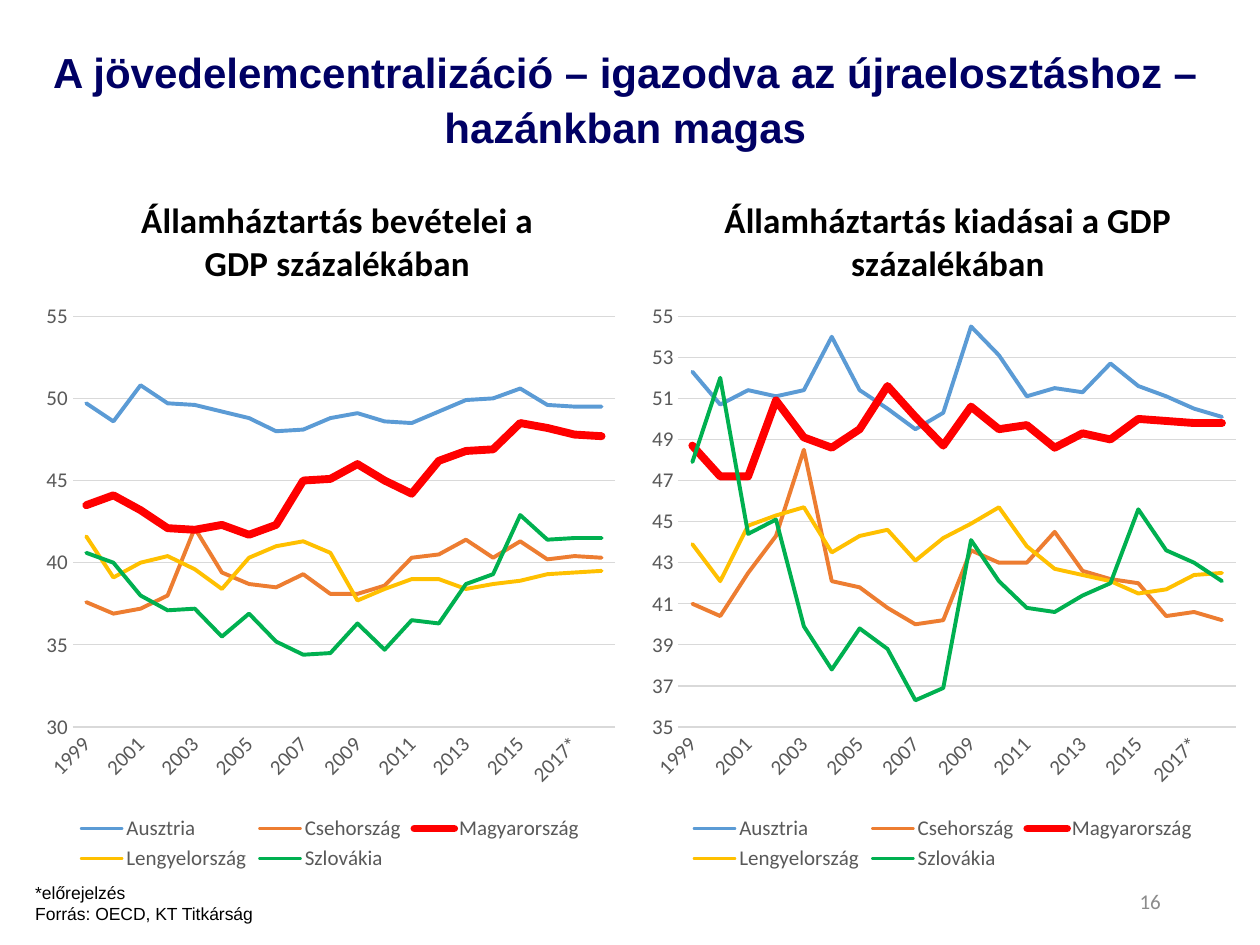
import dataclasses

import pptx
import pptx.chart.data
import pptx.dml.color
import pptx.enum.chart
import pptx.enum.text
import pptx.oxml
import pptx.oxml.ns
import pptx.util
from pptx.util import Cm, Pt


@dataclasses.dataclass(frozen=True)
class Theme:
    head: str = "Arial"
    text: str = "Calibri"
    navy: str = "000064"
    black: str = "000000"
    grey: str = "595959"
    pale: str = "8C8C8C"
    grid: str = "D9D9D9"
    title: int = 24
    chart: int = 20
    label: int = 12
    note: int = 10


THEME = Theme()
ALIGN = pptx.enum.text.PP_ALIGN
ANCHOR = pptx.enum.text.MSO_ANCHOR

YEARS = [str(y) for y in range(1999, 2016)] + ["2016*", "2017*", "2018*"]

# Country: line colour, line width
LINES = {
    "Ausztria": ("5B9BD5", 2.25),
    "Csehország": ("ED7D31", 2.25),
    "Magyarország": ("FF0000", 4.5),
    "Lengyelország": ("FFC000", 2.25),
    "Szlovákia": ("00B050", 2.25),
}

# Values by country, in the order of LINES
INCOME = [
    [49.7, 48.6, 50.8, 49.7, 49.6, 49.2, 48.8, 48, 48.1, 48.8,
     49.1, 48.6, 48.5, 49.2, 49.9, 50, 50.6, 49.6, 49.5, 49.5],
    [37.6, 36.9, 37.2, 38, 42.1, 39.4, 38.7, 38.5, 39.3, 38.1,
     38.1, 38.6, 40.3, 40.5, 41.4, 40.3, 41.3, 40.2, 40.4, 40.3],
    [43.5, 44.1, 43.2, 42.1, 42, 42.3, 41.7, 42.3, 45, 45.1,
     46, 45, 44.2, 46.2, 46.8, 46.9, 48.5, 48.2, 47.8, 47.7],
    [41.6, 39.1, 40, 40.4, 39.6, 38.4, 40.3, 41, 41.3, 40.6,
     37.7, 38.4, 39, 39, 38.4, 38.7, 38.9, 39.3, 39.4, 39.5],
    [40.6, 40, 38, 37.1, 37.2, 35.5, 36.9, 35.2, 34.4, 34.5,
     36.3, 34.7, 36.5, 36.3, 38.7, 39.3, 42.9, 41.4, 41.5, 41.5],
]
SPEND = [
    [52.3, 50.7, 51.4, 51.1, 51.4, 54, 51.4, 50.5, 49.5, 50.3,
     54.5, 53.1, 51.1, 51.5, 51.3, 52.7, 51.6, 51.1, 50.5, 50.1],
    [41, 40.4, 42.5, 44.3, 48.5, 42.1, 41.8, 40.8, 40, 40.2,
     43.6, 43, 43, 44.5, 42.6, 42.2, 42, 40.4, 40.6, 40.2],
    [48.7, 47.2, 47.2, 50.9, 49.1, 48.6, 49.5, 51.6, 50.1, 48.7,
     50.6, 49.5, 49.7, 48.6, 49.3, 49, 50, 49.9, 49.8, 49.8],
    [43.9, 42.1, 44.8, 45.3, 45.7, 43.5, 44.3, 44.6, 43.1, 44.2,
     44.9, 45.7, 43.8, 42.7, 42.4, 42.1, 41.5, 41.7, 42.4, 42.5],
    [47.9, 52, 44.4, 45.1, 39.9, 37.8, 39.8, 38.8, 36.3, 36.9,
     44.1, 42.1, 40.8, 40.6, 41.4, 42, 45.6, 43.6, 43, 42.1],
]


def color(code):
    return pptx.dml.color.RGBColor.from_string(code)


def style(font, name, size, code, bold=False):
    font.name, font.size, font.bold = name, Pt(size), bold
    font.color.rgb = color(code)


def place(shape, left, top, width, height):
    shape.left, shape.top = Cm(left), Cm(top)
    shape.width, shape.height = Cm(width), Cm(height)


def add_title(slide, text):
    shape = slide.shapes.title
    place(shape, 0.3, 0.71, 24.61, 1.5)
    frame = shape.text_frame
    frame.text = text
    frame.vertical_anchor = ANCHOR.TOP
    frame.auto_size = pptx.enum.text.MSO_AUTO_SIZE.NONE
    para = frame.paragraphs[0]
    para.alignment, para.line_spacing = ALIGN.CENTER, 1.1
    style(para.font, THEME.head, THEME.title, THEME.navy, True)


def add_text(slide, box, lines, look, align=ALIGN.LEFT, wrap=True):
    frame = slide.shapes.add_textbox(*map(Cm, box)).text_frame
    frame.word_wrap = wrap
    frame.text = "\n".join(lines)
    for para in frame.paragraphs:
        para.alignment = align
        style(para.font, *look)
    return frame


def set_layout(part, **spots):
    """Fix a chart part at fractions of the chart's size."""
    for old in part.findall(pptx.oxml.ns.qn("c:layout")):
        part.remove(old)
    inner = '<c:layoutTarget val="inner"/>' if "w" in spots else ""
    modes = "".join(f'<c:{k}Mode val="edge"/>' for k in "xy")
    sizes = "".join(f'<c:{k} val="{v}"/>' for k, v in spots.items())
    layout = pptx.oxml.parse_xml(
        f'<c:layout {pptx.oxml.ns.nsdecls("c")}><c:manualLayout>'
        f"{inner}{modes}{sizes}</c:manualLayout></c:layout>")
    part.insert(1 if part.find(pptx.oxml.ns.qn("c:tx")) is not None else 0,
                layout)


def style_axes(chart, low, step):
    none = pptx.enum.chart.XL_TICK_MARK.NONE
    years, share = chart.category_axis, chart.value_axis
    for axis in (years, share):
        axis.major_tick_mark = axis.minor_tick_mark = none
        style(axis.tick_labels.font, THEME.text, THEME.label, THEME.grey)
    years.format.line.color.rgb = color(THEME.grid)
    years.format.line.width = Pt(0.75)
    # Slanted year labels
    years._element.xpath("c:txPr/a:bodyPr")[0].set("rot", "-2700000")

    share.minimum_scale, share.maximum_scale = low, 55
    share.major_unit = step
    share.tick_labels.number_format = "0"
    share.tick_labels.number_format_is_linked = False
    share.format.line.fill.background()
    grid = share.major_gridlines.format.line
    grid.color.rgb, grid.width = color(THEME.grid), Pt(0.75)


def add_chart(slide, box, title, rows, low, step, indent):
    data = pptx.chart.data.CategoryChartData(number_format="0.0")
    data.categories = YEARS
    for name, row in zip(LINES, rows):
        data.add_series(name, row)
    kind = pptx.enum.chart.XL_CHART_TYPE.LINE
    chart = slide.shapes.add_chart(kind, *map(Cm, box), data).chart
    style(chart.font, THEME.text, THEME.note, THEME.black)

    # Title
    chart.has_title = True
    frame = chart.chart_title.text_frame
    frame.text = title
    style(frame.paragraphs[0].font, THEME.text, THEME.chart, THEME.black, True)
    chart.chart_title.include_in_layout = False
    set_layout(chart.chart_title._element, x=indent, y=0.04)

    # Legend
    chart.has_legend = True
    chart.legend.position = pptx.enum.chart.XL_LEGEND_POSITION.BOTTOM
    chart.legend.include_in_layout = False
    style(chart.legend.font, THEME.text, THEME.label, THEME.grey)

    # Lines
    style_axes(chart, low, step)
    plot = chart.plots[0]
    plot.vary_by_categories = False
    for series, (code, width) in zip(plot.series, LINES.values()):
        series.smooth = False
        series.marker.style = pptx.enum.chart.XL_MARKER_STYLE.NONE
        line = series.format.line
        line.color.rgb, line.width = color(code), Pt(width)
        line._ln.set("cap", "rnd")
    area = chart._chartSpace.chart.plotArea
    set_layout(area, x=0.065, y=0.218, w=0.916, h=0.574)


def main():
    deck = pptx.Presentation()
    deck.slide_width, deck.slide_height = Cm(25.4), Cm(19.05)
    slide = deck.slides.add_slide(deck.slide_layouts[5])

    add_title(slide, "A jövedelemcentralizáció – igazodva az "
                     "újraelosztáshoz – hazánkban magas")

    # Charts
    add_chart(slide, (0.69, 3.23, 11.94, 14.43),
              "Államháztartás bevételei a GDP százalékában",
              INCOME, 30, 5, 0.17)
    add_chart(slide, (12.88, 3.23, 12.27, 14.43),
              "Államháztartás kiadásai a GDP százalékában",
              SPEND, 35, 2, 0.13)

    # Footnote and page number
    note = add_text(slide, (0.46, 17.65, 4.98, 1.12),
                    ["*előrejelzés", "Forrás: OECD, KT Titkárság"],
                    (THEME.head, THEME.note, THEME.black), wrap=False)
    note.auto_size = pptx.enum.text.MSO_AUTO_SIZE.SHAPE_TO_FIT_TEXT
    page = add_text(slide, (17.93, 17.65, 5.72, 1.02), ["16"],
                    (THEME.text, THEME.label, THEME.pale), ALIGN.RIGHT)
    page.vertical_anchor = ANCHOR.MIDDLE

    deck.save("out.pptx")


if __name__ == "__main__":
    main()
